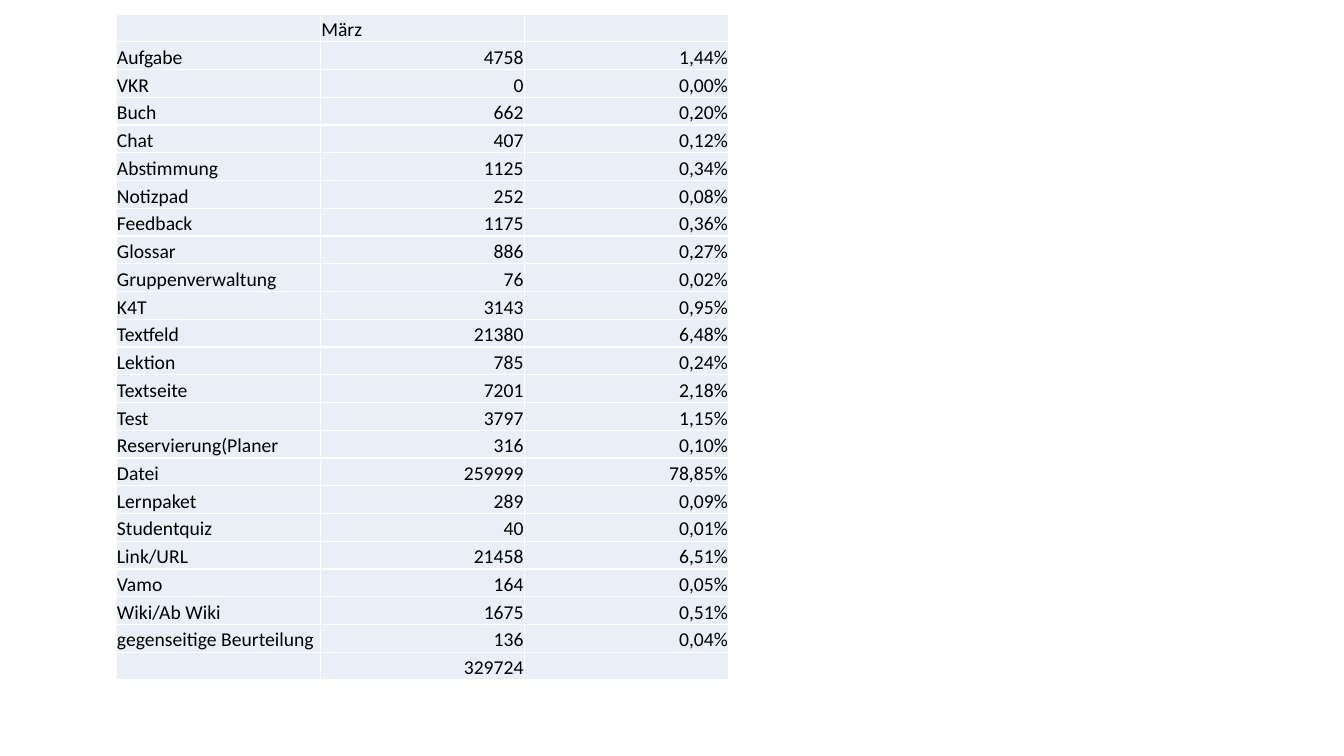
from dataclasses import dataclass

from lxml import etree
from pptx import Presentation
from pptx import util as u
from pptx.dml.color import RGBColor
from pptx.enum import text
from pptx.oxml.ns import qn


@dataclass(frozen=True)
class Theme:
    font: str = "Calibri"
    size: int = 14
    ink: str = "000000"
    fill: str = "EAEFF7"
    border: str = "FFFFFF"
    border_pt: int = 1


theme = Theme()

ROWS = [
    ("", "März", ""),
    ("Aufgabe", "4758", "1,44%"),
    ("VKR", "0", "0,00%"),
    ("Buch", "662", "0,20%"),
    ("Chat", "407", "0,12%"),
    ("Abstimmung", "1125", "0,34%"),
    ("Notizpad", "252", "0,08%"),
    ("Feedback", "1175", "0,36%"),
    ("Glossar", "886", "0,27%"),
    ("Gruppenverwaltung", "76", "0,02%"),
    ("K4T", "3143", "0,95%"),
    ("Textfeld", "21380", "6,48%"),
    ("Lektion", "785", "0,24%"),
    ("Textseite", "7201", "2,18%"),
    ("Test", "3797", "1,15%"),
    ("Reservierung(Planer", "316", "0,10%"),
    ("Datei", "259999", "78,85%"),
    ("Lernpaket", "289", "0,09%"),
    ("Studentquiz", "40", "0,01%"),
    ("Link/URL", "21458", "6,51%"),
    ("Vamo", "164", "0,05%"),
    ("Wiki/Ab Wiki", "1675", "0,51%"),
    ("gegenseitige Beurteilung", "136", "0,04%"),
    ("", "329724", ""),
]


def add_borders(cell):
    """Line all four sides; the lines must come before the fill in tcPr."""
    tc_pr = cell._tc.get_or_add_tcPr()
    for i, side in enumerate(("lnL", "lnR", "lnT", "lnB")):
        ln = etree.Element(qn(f"a:{side}"), w=str(u.Pt(theme.border_pt)))
        solid = etree.SubElement(ln, qn("a:solidFill"))
        etree.SubElement(solid, qn("a:srgbClr"), val=theme.border)
        tc_pr.insert(i, ln)


prs = Presentation()
prs.slide_width, prs.slide_height = u.Inches(13.33), u.Inches(7.5)
s = prs.slides.add_slide(prs.slide_layouts[6])

frame = s.shapes.add_table(len(ROWS), len(ROWS[0]), u.Inches(1.15), u.Inches(0.14),
                           u.Inches(6.08), u.Inches(6.61))
table = frame.table
table.first_row = False
table.horz_banding = False

for row_no, values in enumerate(ROWS):
    for col_no, value in enumerate(values):
        cell = table.cell(row_no, col_no)
        cell.fill.solid()
        cell.fill.fore_color.rgb = RGBColor.from_string(theme.fill)
        add_borders(cell)
        cell.margin_left = cell.margin_right = cell.margin_top = u.Inches(0.01)
        cell.margin_bottom = 0
        cell.vertical_anchor = text.MSO_ANCHOR.BOTTOM
        p = cell.text_frame.paragraphs[0]
        if not value:
            # An empty cell still needs the type size, or it stretches its row
            etree.SubElement(p._p, qn("a:endParaRPr"), sz=str(theme.size * 100))
            continue
        if row_no > 0 and col_no > 0:
            p.alignment = text.PP_ALIGN.RIGHT
        r = p.add_run()
        r.text = value
        r.font.name = theme.font
        r.font.size = u.Pt(theme.size)
        r.font.color.rgb = RGBColor.from_string(theme.ink)

prs.save("out.pptx")
